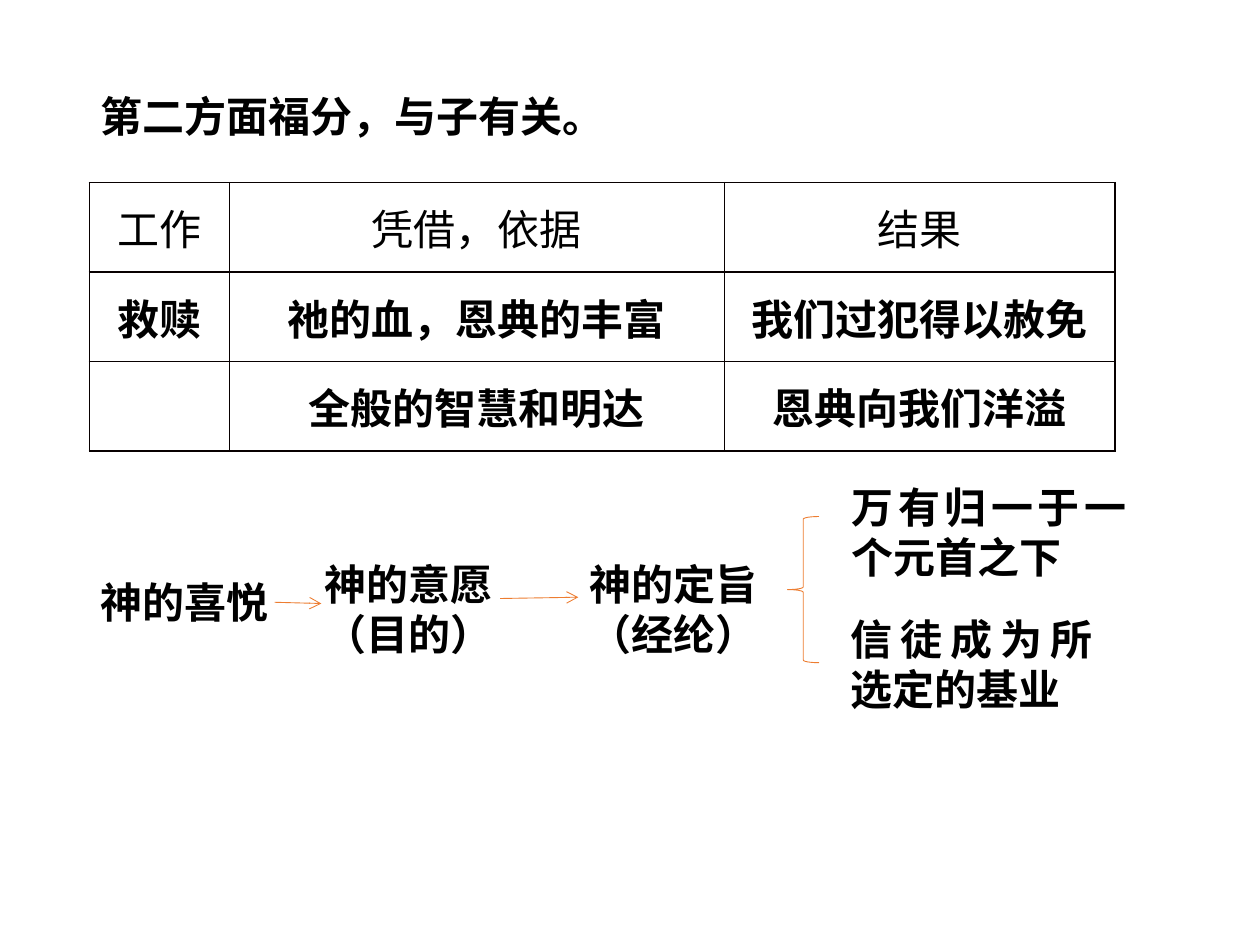
import pptx
import pptx.util
import pptx.dml.color
import pptx.enum.lang
import pptx.enum.shapes
import pptx.enum.text
import pptx.oxml
import pptx.oxml.ns
from lxml import etree

COLORS = {"text": "000000", "paper": "FFFFFF", "border": "080000", "accent": "ED7D31"}
ALIGN = pptx.enum.text.PP_ALIGN
ANCHOR = pptx.enum.text.MSO_ANCHOR
SHAPE = pptx.enum.shapes.MSO_SHAPE


class Board:
    columns, rows = 100, 75
    body_font, table_font = "Calibri", "Noto Sans CJK SC"
    size = pptx.util.Pt(24)
    thin = pptx.util.Pt(0.5)

    def __init__(self, deck):
        self.slide = deck.slides.add_slide(deck.slide_layouts[5])
        self.column = deck.slide_width / self.columns
        self.row = deck.slide_height / self.rows

    def place(self, left, top, width, height):
        return (round(left * self.column), round(top * self.row),
                round(width * self.column), round(height * self.row))

    def color(self, name):
        return pptx.dml.color.RGBColor.from_string(COLORS[name])

    def set_lines(self, frame, lines, align=ALIGN.LEFT, font=body_font, bold=True):
        for index, line in enumerate(lines):
            paragraph = frame.add_paragraph() if index else frame.paragraphs[0]
            paragraph.text = line
            paragraph.alignment = align
            style = paragraph.font
            style.name, style.size, style.bold = font, self.size, bold
            style.color.rgb = self.color("text")
            style.language_id = pptx.enum.lang.MSO_LANGUAGE_ID.SIMPLIFIED_CHINESE
            latin = paragraph._p.pPr.find(".//" + pptx.oxml.ns.qn("a:latin"))
            latin.addnext(etree.Element(pptx.oxml.ns.qn("a:ea"), typeface=font))

    def title(self, text, *area):
        heading = self.slide.shapes.title
        heading.left, heading.top, heading.width, heading.height = self.place(*area)
        heading.text_frame.vertical_anchor = ANCHOR.TOP
        heading.text_frame.auto_size = pptx.enum.text.MSO_AUTO_SIZE.NONE
        self.set_lines(heading.text_frame, [text])

    def label(self, lines, *area):
        label = self.slide.shapes.add_textbox(*self.place(*area))
        label.text_frame.word_wrap = False
        self.set_lines(label.text_frame, lines)

    def panel(self, text, *area):
        panel = self.slide.shapes.add_shape(SHAPE.RECTANGLE, *self.place(*area))
        panel.shadow.inherit = False
        panel.fill.solid()
        panel.fill.fore_color.rgb = self.color("paper")
        panel.line.fill.background()
        panel.text_frame.word_wrap = True
        panel.text_frame.vertical_anchor = ANCHOR.TOP
        self.set_lines(panel.text_frame, [text], ALIGN.JUSTIFY)

    def stroke(self, outlined):
        outlined.line.color.rgb = self.color("accent")
        outlined.line.width = self.thin

    def brace(self, *area):
        brace = self.slide.shapes.add_shape(SHAPE.LEFT_BRACE, *self.place(*area))
        brace.shadow.inherit = False
        brace.fill.background()
        self.stroke(brace)

    def arrow(self, *ends):
        arrow = self.slide.shapes.add_connector(
            pptx.enum.shapes.MSO_CONNECTOR.STRAIGHT, *self.place(*ends))
        self.stroke(arrow)
        properties = arrow._element.spPr
        etree.SubElement(properties.find(pptx.oxml.ns.qn("a:ln")),
                         pptx.oxml.ns.qn("a:tailEnd"), type="arrow")
        etree.SubElement(properties, pptx.oxml.ns.qn("a:effectLst"))

    def border(self, cell):
        properties = cell._tc.get_or_add_tcPr()
        for position, side in enumerate(("lnL", "lnR", "lnT", "lnB")):
            properties.insert(position, pptx.oxml.parse_xml(
                f'<a:{side} {pptx.oxml.ns.nsdecls("a")} w="12700"><a:solidFill>'
                f'<a:srgbClr val="{COLORS["border"]}"/></a:solidFill></a:{side}>'))

    def table(self, content, widths, row_height, left, top):
        grid = self.slide.shapes.add_table(
            len(content), len(widths),
            *self.place(left, top, sum(widths), row_height * len(content))).table
        for column, width in zip(grid.columns, widths):
            column.width = round(width * self.column)
        for row_index, texts in enumerate(content):
            for column_index, text in enumerate(texts):
                cell = grid.cell(row_index, column_index)
                cell.fill.background()
                cell.vertical_anchor = ANCHOR.MIDDLE
                cell.margin_left = cell.margin_right = pptx.util.Inches(0.07)
                cell.margin_top = cell.margin_bottom = 0
                self.set_lines(cell.text_frame, [text], ALIGN.CENTER,
                               self.table_font, row_index > 0)
                self.border(cell)


def main():
    deck = pptx.Presentation()
    deck.slide_width = pptx.util.Inches(10)
    deck.slide_height = pptx.util.Inches(7.5)
    board = Board(deck)
    board.title("第二方面福分，与子有关。", 7, 6.7, 55.6, 5)
    board.table([
        ["工作", "凭借，依据", "结果"],
        ["救赎", "祂的血，恩典的丰富", "我们过犯得以赦免"],
        ["", "全般的智慧和明达", "恩典向我们洋溢"],
    ], [11.1, 39.3, 31], 7.1, 7.1, 14.5)
    board.panel("信徒成为所选定的基业", 66.5, 48.2, 21.2, 6.9)
    board.panel("万有归一于一个元首之下", 66.6, 37.7, 23.8, 6.7)
    board.label(["神的喜悦"], 7, 45.3, 15.4, 5)
    board.label(["神的意愿", "（目的）"], 24.8, 43.8, 15.4, 9.1)
    board.label(["神的定旨", "（经纶）"], 45.8, 43.8, 15.4, 9.1)
    board.arrow(21.8, 47.8, 25.5, 47.9)
    board.arrow(39.7, 47.5, 45.9, 47.4)
    board.brace(62.5, 41, 2.5, 11.6)
    deck.save("out.pptx")


if __name__ == "__main__":
    main()
